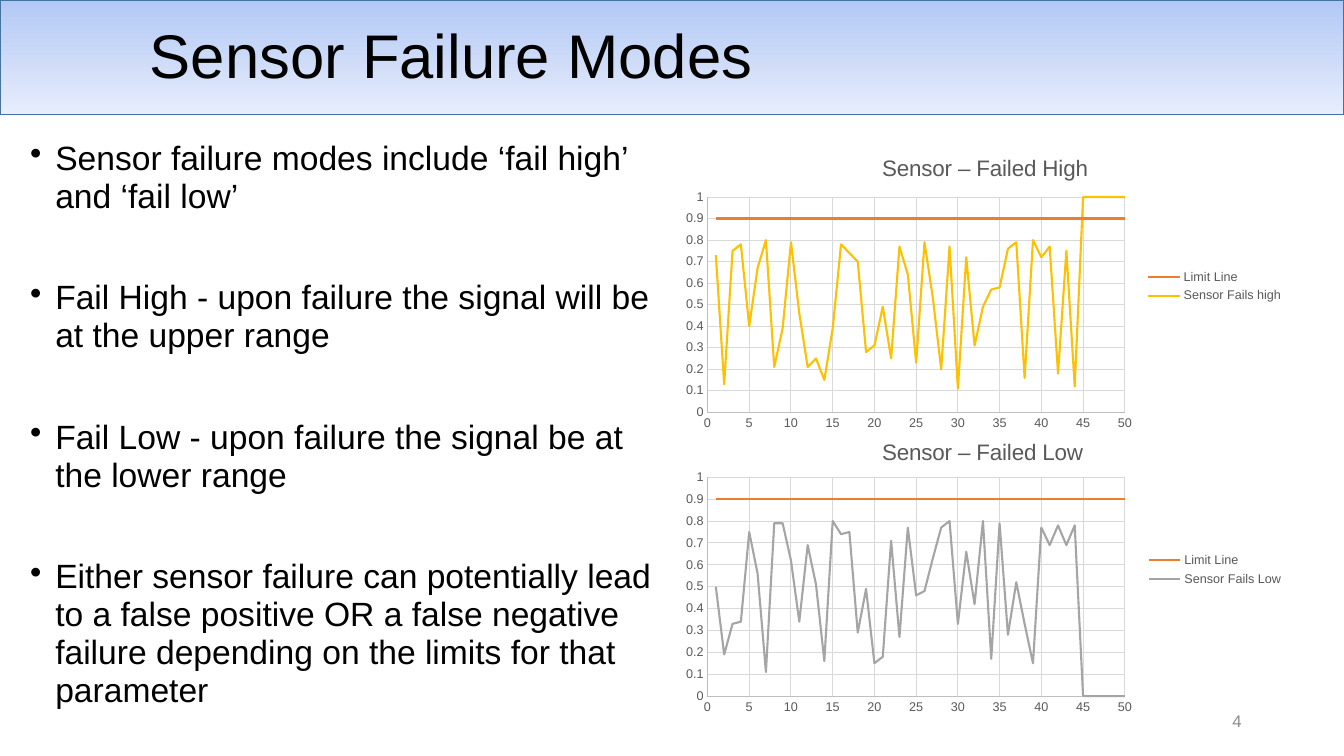
"""Build the Sensor Failure Modes slide with its two scatter charts."""
import pptx
import pptx.chart.data
import pptx.dml.color
import pptx.enum.chart
import pptx.enum.shapes
import pptx.enum.text
import pptx.oxml
import pptx.util

Pt = pptx.util.Pt
ALIGN = pptx.enum.text.PP_ALIGN
GREY = "595959"


def color(value):
    return pptx.dml.color.RGBColor.from_string(value)


def add_text(text, left, top, width, height, size, fill="000000", align=ALIGN.LEFT,
             anchor=pptx.enum.text.MSO_ANCHOR.MIDDLE, spacing=0.9, gap=0, bullet=False):
    frame = slide.shapes.add_textbox(Pt(left), Pt(top), Pt(width), Pt(height)).text_frame
    frame.word_wrap = True
    frame.vertical_anchor = anchor
    frame.text = text
    for index, paragraph in enumerate(frame.paragraphs):
        paragraph.alignment = align
        paragraph.line_spacing = spacing
        paragraph.space_before = Pt(gap if index else 0)
        if bullet:
            properties = paragraph._p.get_or_add_pPr()
            properties.set("marL", str(Pt(18)))
            properties.set("indent", str(Pt(-18)))
            properties.append(pptx.oxml.parse_xml(
                '<a:buChar xmlns:a="http://schemas.openxmlformats.org/drawingml/2006/main" char="•"/>'))
        for run in paragraph.runs:
            run.font.name = "Arial"
            run.font.size = Pt(size)
            run.font.color.rgb = color(fill)


presentation = pptx.Presentation()
presentation.slide_width, presentation.slide_height = Pt(960), Pt(540)
slide = presentation.slides.add_slide(presentation.slide_layouts[6])

banner = slide.shapes.add_shape(pptx.enum.shapes.MSO_SHAPE.RECTANGLE, 0, 0, Pt(960), Pt(82))
banner.shadow.inherit = False
banner.fill.gradient()
banner.fill.gradient_angle = 270
for stop, value in zip(banner.fill.gradient_stops, ("B2C8F5", "E7EDFB")):
    stop.color.rgb = color(value)
banner.line.color.rgb = color("43739E")
banner.line.width = Pt(1)

add_text("Sensor Failure Modes", 100, 8.5, 671, 67, 44)
add_text("4", 678, 500.5, 216, 29, 12, fill="8C8C8C", align=ALIGN.RIGHT, spacing=1)
bullets = [
    "Sensor failure modes include ‘fail high’ and ‘fail low’",
    "Fail High - upon failure the signal will be at the upper range",
    "Fail Low - upon failure the signal be at the lower range",
    "Either sensor failure can potentially lead to a false positive OR a false negative "
    "failure depending on the limits for that parameter",
]
add_text("\n".join(bullets), 14.4, 96.5, 466.6, 427, 24, spacing=0.94, gap=45.5,
         anchor=pptx.enum.text.MSO_ANCHOR.TOP, bullet=True)

fails_high = [
    0.73, 0.13, 0.75, 0.78, 0.4, 0.67, 0.8, 0.21, 0.39, 0.79, 0.46, 0.21, 0.25, 0.15, 0.39,
    0.78, 0.74, 0.7, 0.28, 0.31, 0.49, 0.25, 0.77, 0.64, 0.23, 0.79, 0.53, 0.2, 0.77, 0.11,
    0.72, 0.31, 0.49, 0.57, 0.58, 0.76, 0.79, 0.16, 0.8, 0.72, 0.77, 0.18, 0.75, 0.12,
] + [1] * 6
fails_low = [
    0.5, 0.19, 0.33, 0.34, 0.75, 0.56, 0.11, 0.79, 0.79, 0.62, 0.34, 0.69, 0.51, 0.16, 0.8,
    0.74, 0.75, 0.29, 0.49, 0.15, 0.18, 0.71, 0.27, 0.77, 0.46, 0.48, 0.63, 0.77, 0.8, 0.33,
    0.66, 0.42, 0.8, 0.17, 0.79, 0.28, 0.52, 0.33, 0.15, 0.77, 0.69, 0.78, 0.69, 0.78,
] + [0] * 6

layout_xml = ('<c:layout xmlns:c="http://schemas.openxmlformats.org/drawingml/2006/chart">'
              '<c:manualLayout>{}</c:manualLayout></c:layout>')
title_parts = '<c:xMode val="edge"/><c:yMode val="edge"/><c:x val="0.33"/><c:y val="0.05"/>'
plot_parts = ('<c:layoutTarget val="inner"/><c:xMode val="edge"/><c:yMode val="edge"/>'
              '<c:x val="0.055"/><c:y val="{}"/><c:w val="0.673"/><c:h val="{}"/>')

charts = [
    ("Sensor – Failed High", "Sensor Fails high", fails_high, "FFC000", 96.5, 0.205, 0.712),
    ("Sensor – Failed Low", "Sensor Fails Low", fails_low, "A5A5A5", 298.8, 0.195, 0.724),
]
for title, name, values, line_color, top, plot_top, plot_height in charts:
    data = pptx.chart.data.XyChartData()
    for series_name, series_values in (("Limit Line", [0.9] * 50), (name, values)):
        series = data.add_series(series_name)
        for x, y in enumerate(series_values, start=1):
            series.add_data_point(x, y)
    chart = slide.shapes.add_chart(
        pptx.enum.chart.XL_CHART_TYPE.XY_SCATTER_SMOOTH_NO_MARKERS,
        Pt(481), Pt(top), Pt(443), Pt(216), data).chart
    chart.font.name = "Arial"
    chart.font.size = Pt(9)
    chart.font.color.rgb = color(GREY)
    chart.plots[0].vary_by_categories = False
    for series, value in zip(chart.plots[0].series, ("ED7D31", line_color)):
        series.smooth = True
        series.marker.style = pptx.enum.chart.XL_MARKER_STYLE.NONE
        series.format.line.color.rgb = color(value)
        series.format.line.width = Pt(1.5)

    for axis, maximum, step in ((chart.category_axis, 50, 5), (chart.value_axis, 1, 0.1)):
        axis.minimum_scale, axis.maximum_scale, axis.major_unit = 0, maximum, step
        axis.major_tick_mark = pptx.enum.chart.XL_TICK_MARK.NONE
        axis.minor_tick_mark = pptx.enum.chart.XL_TICK_MARK.NONE
        axis.tick_labels.number_format = "General"
        axis.tick_labels.number_format_is_linked = False
        axis.has_major_gridlines = True
        for line, value in ((axis.format.line, "BFBFBF"),
                            (axis.major_gridlines.format.line, "D9D9D9")):
            line.color.rgb = color(value)
            line.width = Pt(0.75)

    chart.has_legend = True
    chart.legend.position = pptx.enum.chart.XL_LEGEND_POSITION.RIGHT
    chart.legend.include_in_layout = False

    chart.has_title = True
    chart.chart_title.text_frame.text = title
    font = chart.chart_title.text_frame.paragraphs[0].runs[0].font
    font.name, font.size, font.bold = "Arial", Pt(16), False
    font.color.rgb = color(GREY)

    title_element = chart.chart_title._element
    plot_area = chart._chartSpace.chart.plotArea
    for parent, position, parts in (
            (title_element, 1, title_parts),
            (plot_area, 0, plot_parts.format(plot_top, plot_height))):
        for old in parent.xpath("./c:layout"):
            parent.remove(old)
        parent.insert(position, pptx.oxml.parse_xml(layout_xml.format(parts)))

presentation.save("out.pptx")
